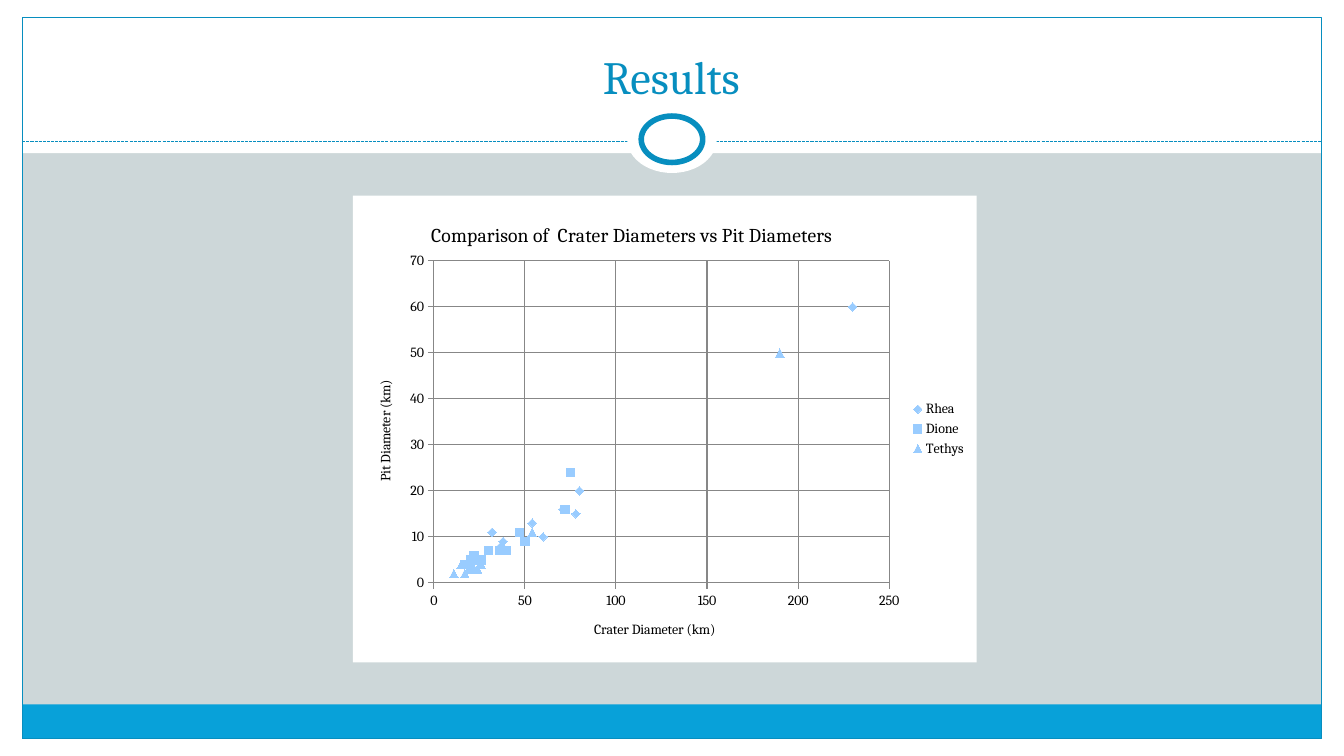
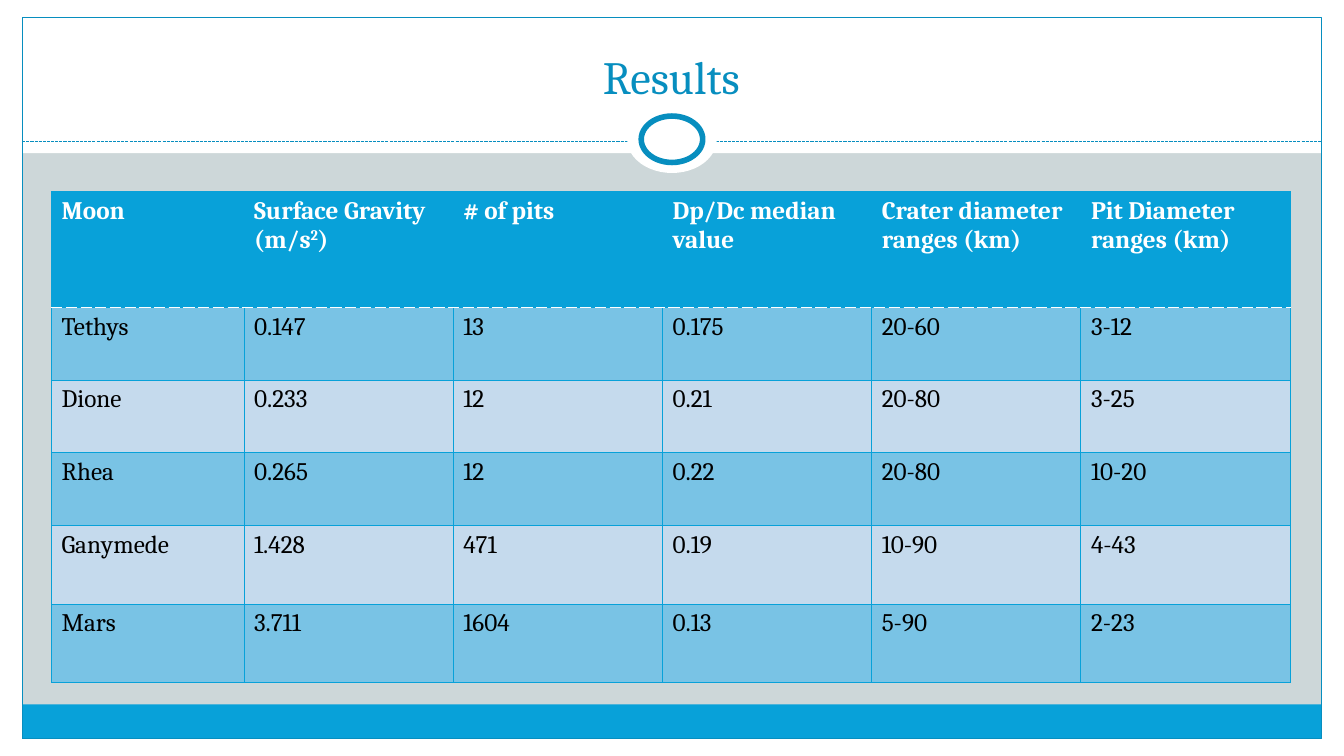
from lxml import etree
from pptx import Presentation
from pptx.chart.data import XyChartData
from pptx.dml.color import RGBColor
from pptx.enum.chart import XL_CHART_TYPE, XL_LEGEND_POSITION, XL_MARKER_STYLE, XL_TICK_MARK
from pptx.enum.dml import MSO_LINE
from pptx.enum.shapes import MSO_CONNECTOR, MSO_SHAPE
from pptx.enum.text import MSO_ANCHOR, PP_ALIGN
from pptx.oxml import parse_xml
from pptx.oxml.ns import nsdecls, qn
from pptx.util import Cm, Pt

RECTANGLE = MSO_SHAPE.RECTANGLE
OVAL = MSO_SHAPE.OVAL
STRAIGHT = MSO_CONNECTOR.STRAIGHT
DASH = MSO_LINE.SQUARE_DOT
CENTER = PP_ALIGN.CENTER
LEFT = PP_ALIGN.LEFT
BOTTOM = MSO_ANCHOR.BOTTOM
SCATTER = XL_CHART_TYPE.XY_SCATTER
LEGEND_RIGHT = XL_LEGEND_POSITION.RIGHT
TICK_OUTSIDE = XL_TICK_MARK.OUTSIDE
DIAMOND = XL_MARKER_STYLE.DIAMOND
SQUARE = XL_MARKER_STYLE.SQUARE
TRIANGLE = XL_MARKER_STYLE.TRIANGLE

COLORS = {
    "background": "CDD7D9",
    "white": "FFFFFF",
    "black": "000000",
    "band": "08A1D9",
    "accent": "078EBF",
    "row_dark": "79C3E5",
    "row_light": "C5DAED",
    "grid": "878787",
    "marker": "99CCFF",
}
FONT = "Cambria"
TITLE_ONLY = 5

# Lengths in centimetres
SLIDE_WIDTH, SLIDE_HEIGHT = 33.87, 19.05
MARGIN = 0.56
FRAME_TOP, FRAME_BOTTOM = 0.43, 18.62
HEADER_HEIGHT = 3.86
FOOTER_HEIGHT = 0.87
RULE_TOP = 3.56
RING_CENTER = 3.51
TITLE_BOX = (1.12, 0.64, 31.6, 2.11)
CHART_BOX = (8.89, 4.93, 15.72, 11.76)
TABLE_BOX = (1.3, 4.83, 31.22, 12.37)

# name, marker, (crater diameter, pit diameter)
CRATERS = [
    ("Rhea", DIAMOND, [
        (80, 20), (78, 15), (54, 13), (32, 11), (38, 9), (38, 9),
        (37, 8), (71, 16), (23, 5), (17, 4), (230, 60), (60, 10)]),
    ("Dione", SQUARE, [
        (72, 16), (22, 6), (47, 11), (26, 5), (20, 3), (50, 9),
        (20, 5), (30, 7), (17, 4), (75, 24), (40, 7), (36, 7)]),
    ("Tethys", TRIANGLE, [
        (15, 4), (22, 3), (24, 3), (26, 5), (22, 5), (54, 11),
        (26, 4), (11, 2), (17, 2), (21, 4), (22, 3), (190, 50)]),
]

MOON_ROWS = [
    ("Moon", "Surface Gravity\n(m/s^2^)", "# of pits", "Dp/Dc median value",
     "Crater diameter ranges (km)", "Pit Diameter ranges (km)"),
    ("Tethys", "0.147", "13", "0.175", "20-60", "3-12"),
    ("Dione", "0.233", "12", "0.21", "20-80", "3-25"),
    ("Rhea", "0.265", "12", "0.22", "20-80", "10-20"),
    ("Ganymede", "1.428", "471", "0.19", "10-90", "4-43"),
    ("Mars", "3.711", "1604", "0.13", "5-90", "2-23"),
]
ROW_HEIGHTS = (2.92, 1.83, 1.83, 1.83, 1.98, 1.98)
FIRST_COLUMN = 4.85


def color(name):
    return RGBColor.from_string(COLORS[name])


def format_font(font, size, fill="black", bold=False):
    font.name = FONT
    font.size = Pt(size)
    font.bold = bold
    font.color.rgb = color(fill)


def write_text(text_frame, text, size=18, fill="black", bold=False, align=LEFT):
    """Write one paragraph per line; text between carets is superscript."""
    text_frame.clear()
    for index, line in enumerate(text.split("\n")):
        paragraph = text_frame.add_paragraph() if index else text_frame.paragraphs[0]
        paragraph.alignment = align
        for position, part in enumerate(line.split("^")):
            if not part:
                continue
            run = paragraph.add_run()
            run.text = part
            format_font(run.font, size, fill, bold)
            if position % 2:
                run._r.get_or_add_rPr().set("baseline", "30000")


def add_panel(slide, kind, box, fill=None, line=None, width=0.75):
    shape = slide.shapes.add_shape(kind, *map(Cm, box))
    shape.shadow.inherit = False
    if fill:
        shape.fill.solid()
        shape.fill.fore_color.rgb = color(fill)
    else:
        shape.fill.background()
    if line:
        shape.line.color.rgb = color(line)
        shape.line.width = Pt(width)
    else:
        shape.line.fill.background()
    return shape


def add_rule(slide, left, top, right):
    connector = slide.shapes.add_connector(STRAIGHT, Cm(left), Cm(top), Cm(right), Cm(top))
    connector.line.color.rgb = color("accent")
    connector.line.width = Pt(0.75)
    connector.line.dash_style = DASH
    etree.SubElement(connector.element.spPr, qn("a:effectLst"))
    return connector


def centered_box(width, height):
    return ((SLIDE_WIDTH - width) / 2, RING_CENTER - height / 2, width, height)


def decorate_layout(layout, slide):
    """Draw the shared frame on a slide, then move it to the layout."""
    layout.background.fill.solid()
    layout.background.fill.fore_color.rgb = color("background")
    for placeholder in list(layout.placeholders)[1:]:
        layout.shapes.element.remove(placeholder.element)
    right = SLIDE_WIDTH - MARGIN
    inner_width = right - MARGIN
    white_edges = [
        (0, FRAME_BOTTOM, SLIDE_WIDTH, SLIDE_HEIGHT - FRAME_BOTTOM),
        (0, 0, SLIDE_WIDTH, HEADER_HEIGHT),
        (0, 0, MARGIN, SLIDE_HEIGHT),
        (right, 0, MARGIN, SLIDE_HEIGHT),
    ]
    shapes = [add_panel(slide, RECTANGLE, box, "white") for box in white_edges]
    shapes += [
        add_panel(slide, RECTANGLE,
                  (MARGIN, FRAME_BOTTOM - FOOTER_HEIGHT, inner_width, FOOTER_HEIGHT), "band"),
        add_panel(slide, RECTANGLE,
                  (MARGIN, FRAME_TOP, inner_width, FRAME_BOTTOM - FRAME_TOP), line="accent"),
        add_rule(slide, MARGIN, RULE_TOP, right),
        add_panel(slide, OVAL, centered_box(2.26, 1.7), "white"),
        add_panel(slide, OVAL, centered_box(1.55, 1.17), "white", "accent", 4),
    ]
    for shape in shapes:
        layout.shapes.element.append(shape.element)


def set_title(slide, text):
    title = slide.shapes.title
    title.left, title.top, title.width, title.height = map(Cm, TITLE_BOX)
    title.text_frame.vertical_anchor = BOTTOM
    write_text(title.text_frame, text, size=33, fill="accent", align=CENTER)


def set_chart_layout(parent, index, **fractions):
    """Place a chart part by fractions of the chart's size."""
    existing = parent.find(qn("c:layout"))
    if existing is not None:
        parent.remove(existing)
    target = '<c:layoutTarget val="inner"/>' if "w" in fractions else ""
    modes = '<c:xMode val="edge"/><c:yMode val="edge"/>'
    values = "".join(f'<c:{key} val="{value}"/>' for key, value in fractions.items())
    parent.insert(index, parse_xml(
        f'<c:layout {nsdecls("c")}><c:manualLayout>{target}{modes}{values}'
        '</c:manualLayout></c:layout>'))


def format_axis(axis, title, maximum, step):
    axis.minimum_scale, axis.maximum_scale, axis.major_unit = 0, maximum, step
    axis.major_tick_mark = TICK_OUTSIDE
    axis.has_major_gridlines = True
    for line in (axis.format.line, axis.major_gridlines.format.line):
        line.color.rgb = color("grid")
        line.width = Pt(0.75)
    format_font(axis.tick_labels.font, 10)
    write_text(axis.axis_title.text_frame, title, size=10, align=CENTER)


def add_crater_chart(slide, box):
    data = XyChartData()
    for name, _, points in CRATERS:
        series_data = data.add_series(name)
        for crater, pit in points:
            series_data.add_data_point(crater, pit)
    chart = slide.shapes.add_chart(SCATTER, *map(Cm, box), data).chart
    format_font(chart.font, 10)
    chart.has_title = True
    write_text(chart.chart_title.text_frame,
               "Comparison of  Crater Diameters vs Pit Diameters", size=14, align=CENTER)
    set_chart_layout(chart.chart_title.element, 1, x=0.12, y=0.05)
    format_axis(chart.category_axis, "Crater Diameter (km)", 250, 50)
    format_axis(chart.value_axis, "Pit Diameter (km)", 70, 10)
    chart.has_legend = True
    chart.legend.position = LEGEND_RIGHT
    chart.legend.include_in_layout = False
    format_font(chart.legend.font, 10)
    chart.plots[0].vary_by_categories = False
    for series, (_, marker_style, _) in zip(chart.plots[0].series, CRATERS):
        series.format.line.fill.background()
        series.marker.style = marker_style
        series.marker.size = 6
        series.marker.format.fill.solid()
        series.marker.format.fill.fore_color.rgb = color("marker")
        series.marker.format.line.fill.background()
    chart_part = chart.element.find(qn("c:chart"))
    set_chart_layout(chart_part.find(qn("c:plotArea")), 0, x=0.13, y=0.14, w=0.73, h=0.69)
    chart_part.addnext(parse_xml(
        f'<c:spPr {nsdecls("c", "a")}><a:solidFill><a:srgbClr val="{COLORS["white"]}"/>'
        '</a:solidFill><a:ln><a:noFill/></a:ln></c:spPr>'))


def set_borders(cell, dashed_side=None):
    """Outline a cell; the dashed side is white."""
    properties = cell._tc.get_or_add_tcPr()
    for index, side in enumerate("LRTB"):
        dashed = side == dashed_side
        line_color = COLORS["white" if dashed else "band"]
        width = Pt(0.9 if dashed else 0.75)
        dash = "sysDash" if dashed else "solid"
        properties.insert(index, parse_xml(
            f'<a:ln{side} {nsdecls("a")} w="{width}"><a:solidFill>'
            f'<a:srgbClr val="{line_color}"/></a:solidFill>'
            f'<a:prstDash val="{dash}"/></a:ln{side}>'))


def add_moon_table(slide, box):
    column_count = len(MOON_ROWS[0])
    table = slide.shapes.add_table(len(MOON_ROWS), column_count, *map(Cm, box)).table
    other_column = (box[2] - FIRST_COLUMN) / (column_count - 1)
    for index, column in enumerate(table.columns):
        column.width = Cm(other_column if index else FIRST_COLUMN)
    for row_index, (values, height) in enumerate(zip(MOON_ROWS, ROW_HEIGHTS)):
        table.rows[row_index].height = Cm(height)
        is_header = row_index == 0
        row_fill = "band" if is_header else "row_dark" if row_index % 2 else "row_light"
        for cell, value in zip(table.rows[row_index].cells, values):
            write_text(cell.text_frame, value, bold=is_header,
                       fill="white" if is_header else "black")
            cell.fill.solid()
            cell.fill.fore_color.rgb = color(row_fill)
            set_borders(cell, {0: "B", 1: "T"}.get(row_index))


def main():
    presentation = Presentation()
    presentation.slide_width = Cm(SLIDE_WIDTH)
    presentation.slide_height = Cm(SLIDE_HEIGHT)
    layout = presentation.slide_layouts[TITLE_ONLY]
    chart_slide, table_slide = [presentation.slides.add_slide(layout) for _ in range(2)]
    decorate_layout(layout, chart_slide)
    for slide in (chart_slide, table_slide):
        set_title(slide, "Results")
    add_crater_chart(chart_slide, CHART_BOX)
    add_moon_table(table_slide, TABLE_BOX)
    presentation.save("out.pptx")


if __name__ == "__main__":
    main()
